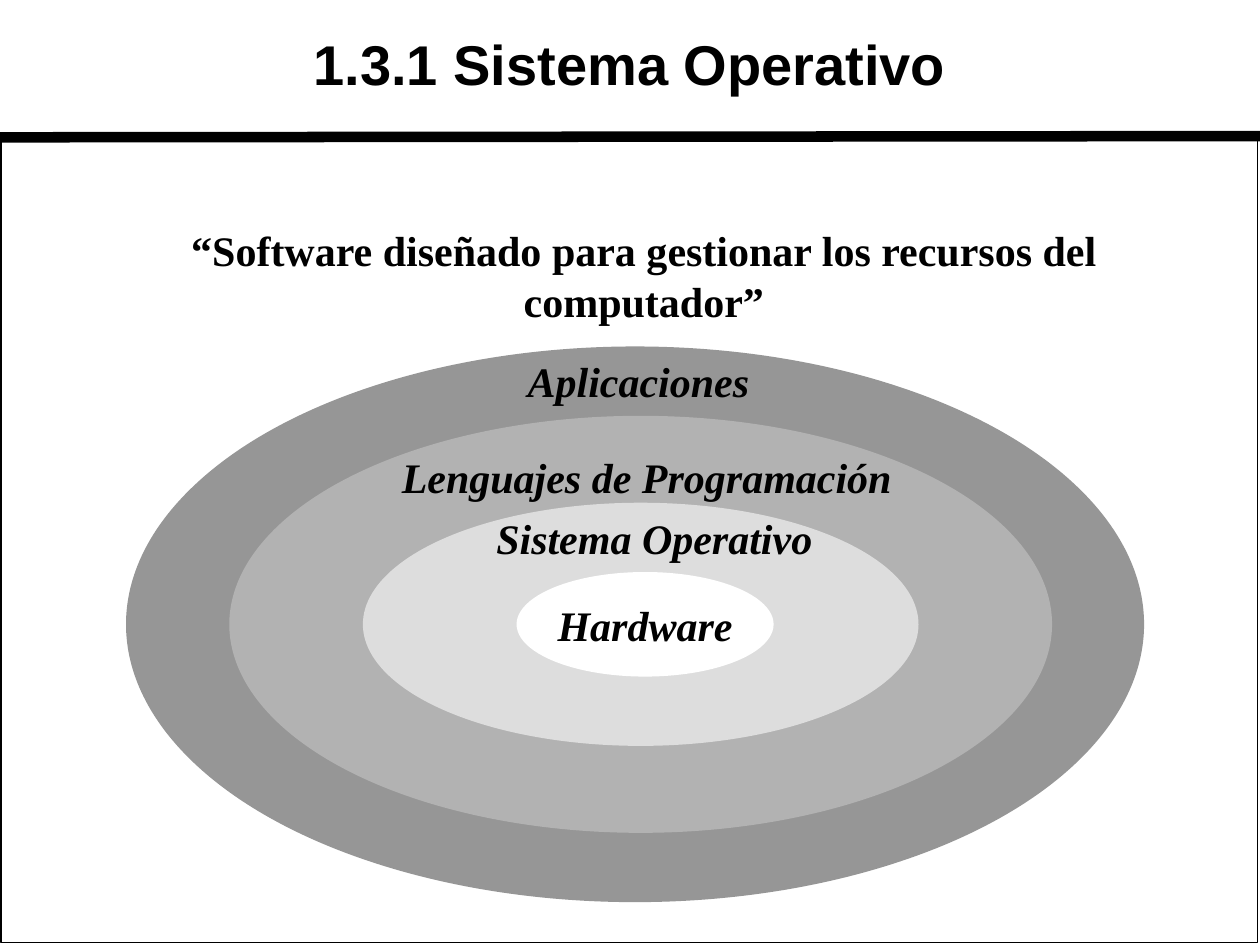
from lxml import etree
from pptx import Presentation
from pptx.dml.color import RGBColor
from pptx.enum.shapes import MSO_CONNECTOR, MSO_SHAPE
from pptx.enum.text import MSO_ANCHOR, MSO_AUTO_SIZE, PP_ALIGN
from pptx.oxml.ns import qn
from pptx.util import Pt

CENTER, LEFT = PP_ALIGN.CENTER, PP_ALIGN.LEFT
MIDDLE = MSO_ANCHOR.MIDDLE
FIT_SHAPE, NO_FIT = MSO_AUTO_SIZE.SHAPE_TO_FIT_TEXT, MSO_AUTO_SIZE.NONE
RECTANGLE, ELLIPSE = MSO_SHAPE.RECTANGLE, MSO_SHAPE.OVAL
STRAIGHT = MSO_CONNECTOR.STRAIGHT
TITLE_ONLY = 5

BLACK = "000000"
TITLE = "1.3.1 Sistema Operativo"
DEFINITION = "“Software diseñado para gestionar los recursos del computador”"
HARDWARE = "Hardware"

# Boxes are (left, top, width, height) in points
TITLE_BOX = (18, 0, 684, 72)
DEFINITION_BOX = (59.76, 124.56, 616.32, 65.52)
FRAME_BOX = (0.72, 77.76, 717.84, 460.8)
RULE_ENDS = (0, 78.48, 721.44, 77.76)
LAYERS = [
    ("969696", (72, 198, 581.76, 317.52)),
    ("B2B2B2", (131.04, 237.6, 470.16, 238.32)),
    ("DDDDDD", (207.36, 287.28, 317.52, 138.96)),
    ("FFFFFF", (295.2, 326.88, 146.88, 59.76)),
]
LAYER_LABELS = [
    ("Lenguajes de Programación", (222.48, 254.16, 294.48, 36)),
    ("Sistema Operativo", (276.48, 289.44, 195.12, 36)),
    ("Aplicaciones", (294.48, 199.44, 141.12, 36)),
]

TITLE_FONT = {"name": "Arial", "size": Pt(32), "bold": True, "italic": False}
BODY_FONT = {"name": "Times New Roman", "size": Pt(24), "bold": True, "italic": False}
LABEL_FONT = {**BODY_FONT, "italic": True}


def color(hex_value):
    return RGBColor.from_string(hex_value)


def points(values):
    return [Pt(value) for value in values]


def write(shape, text, font, align=CENTER, wrap=True, fit=NO_FIT):
    frame = shape.text_frame
    frame_format = {
        "vertical_anchor": MIDDLE, "word_wrap": wrap, "auto_size": fit,
        "margin_left": Pt(7.2), "margin_right": Pt(7.2),
        "margin_top": Pt(3.6), "margin_bottom": Pt(3.6),
    }
    for name, value in frame_format.items():
        setattr(frame, name, value)
    paragraph = frame.paragraphs[0]
    paragraph.alignment = align
    run = paragraph.add_run()
    run.text = text
    for name, value in font.items():
        setattr(run.font, name, value)
    run.font.color.rgb = color(BLACK)


def add_frame(slide):
    rule = slide.shapes.add_connector(STRAIGHT, *points(RULE_ENDS))
    rule.line.width = Pt(6)
    rule.line.color.rgb = color(BLACK)
    etree.SubElement(rule.line._get_or_add_ln().getparent(), qn("a:effectLst"))

    border = slide.shapes.add_shape(RECTANGLE, *points(FRAME_BOX))
    border.shadow.inherit = False
    border.fill.background()
    border.line.width = Pt(1)
    border.line.color.rgb = color(BLACK)


def add_layers(slide):
    """Draw the nested ellipses, outermost first, and their labels as one group."""
    group = slide.shapes.add_group_shape()
    for fill, box in LAYERS:
        layer = group.shapes.add_shape(ELLIPSE, *points(box))
        layer.shadow.inherit = False
        layer.fill.solid()
        layer.fill.fore_color.rgb = color(fill)
        layer.line.fill.background()
    write(layer, HARDWARE, LABEL_FONT, wrap=False)

    for text, box in LAYER_LABELS:
        label = group.shapes.add_textbox(*points(box))
        write(label, text, LABEL_FONT, align=LEFT, wrap=False, fit=FIT_SHAPE)


def main():
    deck = Presentation()
    deck.slide_width, deck.slide_height = Pt(720), Pt(540)
    slide = deck.slides.add_slide(deck.slide_layouts[TITLE_ONLY])

    add_frame(slide)
    title = slide.shapes.title
    title.left, title.top, title.width, title.height = points(TITLE_BOX)
    write(title, TITLE, TITLE_FONT)
    definition = slide.shapes.add_textbox(*points(DEFINITION_BOX))
    write(definition, DEFINITION, BODY_FONT, fit=FIT_SHAPE)
    add_layers(slide)

    deck.save("out.pptx")


if __name__ == "__main__":
    main()
